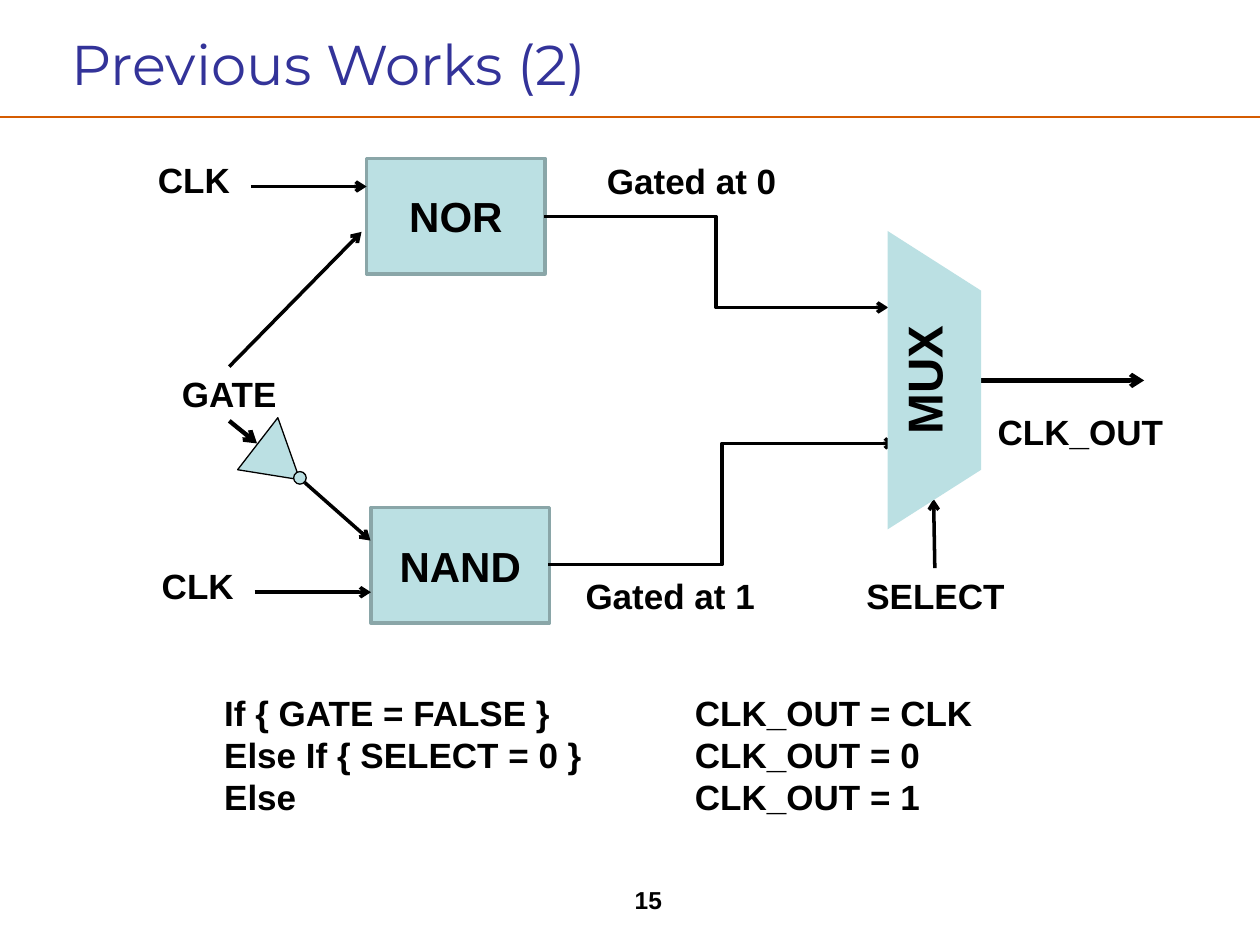
from dataclasses import dataclass

from lxml.etree import SubElement
from pptx import Presentation
from pptx.dml.color import RGBColor
from pptx.enum.shapes import MSO_CONNECTOR as Connector, MSO_SHAPE as Shape
from pptx.enum.text import MSO_ANCHOR as Anchor, PP_ALIGN as Align
from pptx.oxml import parse_xml
from pptx.oxml.ns import nsdecls, qn
from pptx.util import Pt


@dataclass(frozen=True)
class Theme:
    title: RGBColor = RGBColor(0x33, 0x33, 0x99)
    rule: RGBColor = RGBColor(0xD5, 0x5C, 0x01)
    ink: RGBColor = RGBColor(0, 0, 0)
    block: RGBColor = RGBColor(0xBB, 0xE0, 0xE3)
    block_edge: RGBColor = RGBColor(0x8A, 0xA6, 0xA8)
    title_font: str = "Montserrat"
    body_font: str = "Arial"
    title_size: int = 32
    mux_size: int = 28
    gate_size: int = 24
    label_size: int = 20
    number_size: int = 14
    label_spacing: int = 24


theme = Theme()
presentation = Presentation()
presentation.slide_width, presentation.slide_height = Pt(720), Pt(540)
slide = presentation.slides.add_slide(presentation.slide_layouts[6])
shapes = slide.shapes


def write(shape, text, size, align=Align.CENTER, anchor=Anchor.TOP, wrap=True):
    """Fill a shape with bold black body text, one paragraph per line."""
    frame = shape.text_frame
    frame.word_wrap, frame.vertical_anchor = wrap, anchor
    frame.text = text
    for paragraph in frame.paragraphs:
        paragraph.alignment = align
        if size == theme.label_size:
            paragraph.line_spacing = Pt(theme.label_spacing)
        font = paragraph.font
        font.name, font.size, font.bold = theme.body_font, Pt(size), True
        font.color.rgb = theme.ink
    return frame


def add_line(kind, ends, color, width, arrow=True):
    line = shapes.add_connector(kind, *map(Pt, ends))
    line.line.color.rgb, line.line.width = color, Pt(width)
    if arrow:
        SubElement(line.line._get_or_add_ln(), qn("a:tailEnd"), type="arrow")
    SubElement(line._element.spPr, qn("a:effectLst"))


# Title, rule and slide number
add_line(Connector.STRAIGHT, (0, 67, 720, 67), theme.rule, 1, arrow=False)
title = shapes.add_textbox(Pt(34), Pt(8), Pt(652), Pt(56))
frame = write(title, "Previous Works (2)", theme.title_size, Align.LEFT, Anchor.MIDDLE)
title_font = frame.paragraphs[0].font
title_font.name, title_font.bold = theme.title_font, False
title_font.color.rgb = theme.title
number = shapes.add_textbox(Pt(286.5), Pt(502), Pt(168), Pt(29))
write(number, "15", theme.number_size)

# Gates
for name, left, top in [("NOR", 209.5, 90.5), ("NAND", 212, 290)]:
    gate = shapes.add_shape(Shape.RECTANGLE, Pt(left), Pt(top), Pt(102), Pt(66))
    gate.shadow.inherit = False
    gate.fill.solid()
    gate.fill.fore_color.rgb = theme.block
    gate.line.color.rgb, gate.line.width = theme.block_edge, Pt(2)
    write(gate, name, theme.gate_size, anchor=Anchor.MIDDLE)

# Inverter: triangle and bubble
for kind, left, top, width, height, angle in [
    (Shape.ISOSCELES_TRIANGLE, 138.2, 238.5, 36, 33, 9.1),
    (Shape.OVAL, 167.8, 269.5, 7.2, 7.2, 0),
]:
    part = shapes.add_shape(kind, Pt(left), Pt(top), Pt(width), Pt(height))
    part.rotation = angle
    part.shadow.inherit = False
    part.fill.solid()
    part.fill.fore_color.rgb = theme.block
    part.line.color.rgb, part.line.width = theme.ink, Pt(0.75)

# Wires
for kind, ends, width in [
    (Connector.STRAIGHT, (143.3, 106.6, 209.5, 106.6), 2),  # CLK to NOR
    (Connector.STRAIGHT, (145.5, 338.4, 212, 338.4), 2),  # CLK to NAND
    (Connector.STRAIGHT, (131, 209.5, 206.6, 132.5), 2),  # GATE to NOR
    (Connector.STRAIGHT, (131, 240.5, 146.9, 253.4), 2.5),  # GATE to inverter
    (Connector.STRAIGHT, (174.2, 275.8, 211.7, 308.9), 2),  # inverter to NAND
    (Connector.ELBOW, (311, 123.8, 507.6, 175.7), 2),  # NOR to MUX
    (Connector.ELBOW, (313.2, 322.6, 511.9, 253.4), 2),  # NAND to MUX
    (Connector.STRAIGHT, (534.2, 324.7, 533.5, 285.1), 2),  # SELECT to MUX
    (Connector.STRAIGHT, (560.2, 217.4, 653.8, 217.4), 2.5),  # MUX to CLK_OUT
]:
    add_line(kind, ends, theme.ink, width)

# Multiplexer, covering the wire ends
mux = shapes.add_shape(
    Shape.FLOWCHART_MANUAL_OPERATION, Pt(448.6), Pt(190.5), Pt(170.6), Pt(53.5)
)
mux.rotation = 270
mux.shadow.inherit = False
mux.fill.solid()
mux.fill.fore_color.rgb = theme.block
mux.line.fill.background()
write(mux, "MUX", theme.mux_size)

# Signal labels
for text, left, top, width in [
    ("CLK", 82.8, 87.1, 56),
    ("GATE", 96.5, 209.5, 69),
    ("CLK", 85, 319, 56),
    ("Gated at 0", 339.1, 87.8, 112.3),
    ("Gated at 1", 326.9, 324.7, 112.3),
    ("SELECT", 487.4, 324.7, 94.3),
    ("CLK_OUT", 562.3, 231.1, 110.2),
]:
    label = shapes.add_textbox(Pt(left), Pt(top), Pt(width), Pt(31.7))
    write(label, text, theme.label_size, wrap=False)

# Truth rules, with the results on a tab stop
rules = [
    ("If { GATE = FALSE }", "CLK_OUT = CLK"),
    ("Else If { SELECT = 0 }", "CLK_OUT = 0"),
    ("Else", "CLK_OUT = 1"),
]
rule_box = shapes.add_textbox(Pt(121), Pt(391.7), Pt(500), Pt(80))
frame = write(rule_box, "\n".join(map("\t".join, rules)), theme.label_size, Align.LEFT)
for paragraph in frame.paragraphs:
    tabs = parse_xml(
        f'<a:tabLst {nsdecls("a")}><a:tab pos="{Pt(269)}" algn="l"/></a:tabLst>'
    )
    properties = paragraph._p.get_or_add_pPr()
    properties.find(qn("a:defRPr")).addprevious(tabs)

presentation.save("out.pptx")
